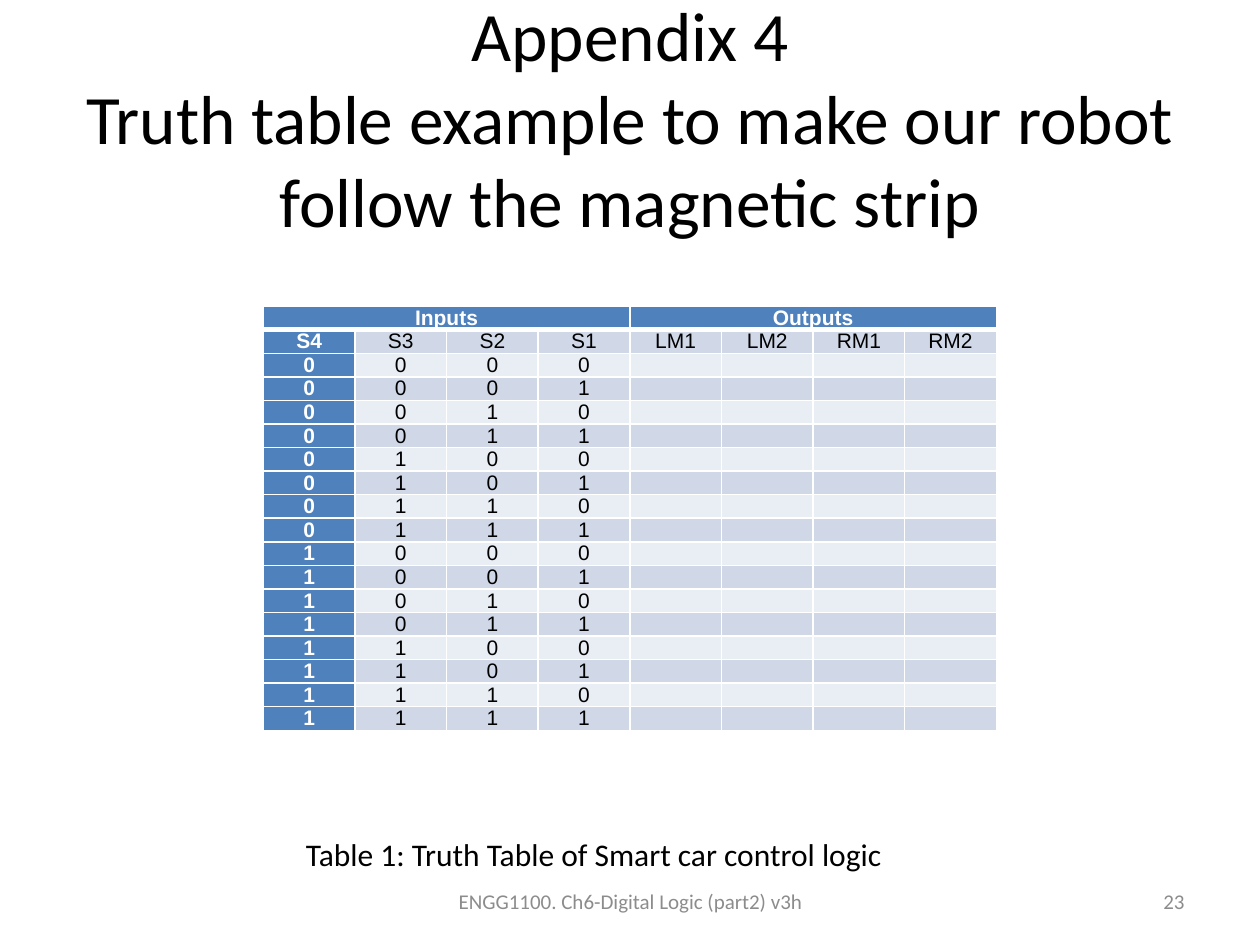
from dataclasses import dataclass
from itertools import product

from lxml import etree
from pptx import Presentation
from pptx.dml.color import RGBColor
from pptx.enum import text
from pptx.oxml import ns
from pptx.util import Inches, Pt

COLORS = {
    "black": "000000",
    "white": "FFFFFF",
    "gray": "8C8C8C",
    "header": "4F81BD",
    "dark_band": "D0D8E8",
    "light_band": "E9EDF4",
}
LEFT, CENTER, RIGHT = text.PP_ALIGN.LEFT, text.PP_ALIGN.CENTER, text.PP_ALIGN.RIGHT
TOP, MIDDLE = text.MSO_ANCHOR.TOP, text.MSO_ANCHOR.MIDDLE

GROUPS = ["Inputs", "Outputs"]
SENSORS = ["S4", "S3", "S2", "S1"]
MOTORS = ["LM1", "LM2", "RM1", "RM2"]
TABLE_WIDTH, TABLE_HEIGHT = 5.82, 3.37


@dataclass
class Label:
    content: str
    left: float
    top: float
    width: float
    height: float
    size: float
    color: str = "black"
    align: text.PP_ALIGN = CENTER
    anchor: text.MSO_ANCHOR = MIDDLE
    wrap: bool = True


LABELS = [
    Label("Appendix 4\vTruth table example to make our robot follow the magnetic strip",
          0.5, 0.3, 9, 1.25, 39.6),
    Label("Table 1: Truth Table of Smart car control logic",
          2.33, 6.58, 4.83, 0.71, 18, align=LEFT, anchor=TOP, wrap=False),
    Label("ENGG1100. Ch6-Digital Logic (part2) v3h", 3.42, 6.95, 3.17, 0.4, 12, "gray"),
    Label("23", 7.17, 6.95, 2.33, 0.4, 12, "gray", RIGHT),
]


def write_text(frame, content: str, *, size: float, color: str, font: str = "Calibri",
               bold: bool = False, align=CENTER) -> None:
    frame.text = content
    paragraph = frame.paragraphs[0]
    paragraph.alignment = align
    for run in paragraph.runs:
        run.font.name = font
        run.font.size = Pt(size)
        run.font.bold = bold
        run.font.color.rgb = RGBColor.from_string(COLORS[color])
    if not content:
        end = etree.SubElement(paragraph._p, ns.qn("a:endParaRPr"), sz=str(int(size * 100)))
        etree.SubElement(end, ns.qn("a:latin"), typeface=font)


def draw_label(slide, label: Label) -> None:
    shape = slide.shapes.add_textbox(Inches(label.left), Inches(label.top),
                                     Inches(label.width), Inches(label.height))
    frame = shape.text_frame
    frame.word_wrap = label.wrap
    frame.vertical_anchor = label.anchor
    write_text(frame, label.content, size=label.size, color=label.color, align=label.align)


def set_borders(cell, bottom: float) -> None:
    properties = cell._tc.get_or_add_tcPr()
    widths = {"lnL": 1, "lnR": 1, "lnT": 1, "lnB": bottom}
    for position, (side, width) in enumerate(widths.items()):
        line = etree.Element(ns.qn(f"a:{side}"), w=str(Pt(width)))
        fill = etree.SubElement(line, ns.qn("a:solidFill"))
        etree.SubElement(fill, ns.qn("a:srgbClr"), val=COLORS["white"])
        properties.insert(position, line)


def format_cell(cell, content: str, fill: str, emphasized: bool, bottom: float) -> None:
    cell.margin_left = cell.margin_right = Inches(0.07)
    cell.margin_top = cell.margin_bottom = 0
    cell.fill.solid()
    cell.fill.fore_color.rgb = RGBColor.from_string(COLORS[fill])
    set_borders(cell, bottom)
    write_text(cell.text_frame, content, size=12, font="Arial", bold=emphasized,
               color="white" if emphasized else "black")


def draw_truth_table(slide) -> None:
    header = [GROUPS[0], "", "", "", GROUPS[1], "", "", ""]
    states = [list(bits) + [""] * len(MOTORS) for bits in product("01", repeat=len(SENSORS))]
    rows = [header, SENSORS + MOTORS, *states]
    table = slide.shapes.add_table(len(rows), len(header), Inches(2.09), Inches(2.43),
                                   Inches(TABLE_WIDTH), Inches(TABLE_HEIGHT)).table
    for row in table.rows:
        row.height = Inches(TABLE_HEIGHT / len(rows))
    for row_index, row in enumerate(rows):
        band = "dark_band" if row_index % 2 else "light_band"
        for column_index, content in enumerate(row):
            emphasized = row_index == 0 or column_index == 0
            format_cell(table.cell(row_index, column_index), content,
                        "header" if emphasized else band, emphasized,
                        3 if row_index == 0 else 1)
    for first in (0, len(SENSORS)):
        table.cell(0, first).merge(table.cell(0, first + 3))


def main() -> None:
    presentation = Presentation()
    presentation.slide_width, presentation.slide_height = Inches(10), Inches(7.5)
    slide = presentation.slides.add_slide(presentation.slide_layouts[6])
    draw_truth_table(slide)
    for label in LABELS:
        draw_label(slide, label)
    presentation.save("out.pptx")


if __name__ == "__main__":
    main()
